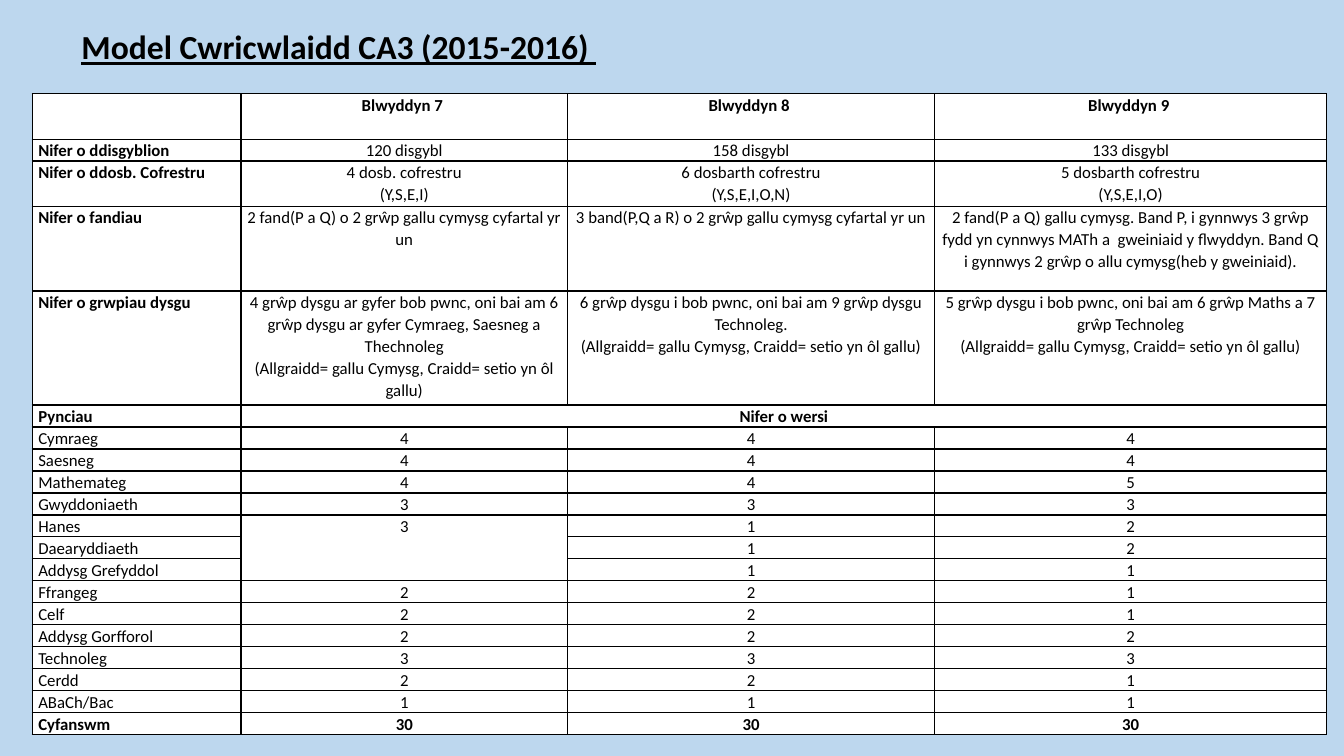
"""Build the Key Stage 3 curriculum model slide."""
import lxml.etree
import pptx
import pptx.dml.color
import pptx.enum.text
import pptx.oxml.ns
import pptx.util

Inches = pptx.util.Inches
ALIGN = pptx.enum.text.PP_ALIGN
qn = pptx.oxml.ns.qn

SETTING = "(Allgraidd= gallu Cymysg, Craidd= setio yn ôl gallu)"
SUMMARY_ROWS = [
    ["", "Blwyddyn 7 ", "Blwyddyn 8 ", "Blwyddyn 9 "],
    ["Nifer o ddisgyblion", "120 disgybl", "158 disgybl", "133 disgybl"],
    ["Nifer o ddosb. Cofrestru", "4 dosb. cofrestru\n(Y,S,E,I)",
     "6 dosbarth cofrestru\n(Y,S,E,I,O,N)", "5 dosbarth cofrestru\n(Y,S,E,I,O)"],
    ["Nifer o fandiau",
     "2 fand(P a Q) o 2 grŵp gallu cymysg cyfartal yr un",
     "3 band(P,Q a R) o 2 grŵp gallu cymysg cyfartal yr un",
     "2 fand(P a Q) gallu cymysg. Band P, i gynnwys 3 grŵp fydd yn cynnwys MATh a  gweiniaid "
     "y flwyddyn. Band Q i gynnwys 2 grŵp o allu cymysg(heb y gweiniaid)."],
    ["Nifer o grwpiau dysgu",
     "4 grŵp dysgu ar gyfer bob pwnc, oni bai am 6 grŵp dysgu ar gyfer Cymraeg, Saesneg "
     f"a Thechnoleg\n{SETTING}",
     f"6 grŵp dysgu i bob pwnc, oni bai am 9 grŵp dysgu Technoleg.\n{SETTING}",
     f"5 grŵp dysgu i bob pwnc, oni bai am 6 grŵp Maths a 7 grŵp Technoleg\n{SETTING}"],
    ["Pynciau", "Nifer o wersi", "", ""],
]
LESSONS = [
    ("Cymraeg", 4, 4, 4),
    ("Saesneg", 4, 4, 4),
    ("Mathemateg", 4, 4, 5),
    ("Gwyddoniaeth", 3, 3, 3),
    ("Hanes", 3, 1, 2),
    ("Daearyddiaeth", "", 1, 2),
    ("Addysg Grefyddol", "", 1, 1),
    ("Ffrangeg", 2, 2, 1),
    ("Celf", 2, 2, 1),
    ("Addysg Gorfforol", 2, 2, 2),
    ("Technoleg", 3, 3, 3),
    ("Cerdd", 2, 2, 1),
    ("ABaCh/Bac", 1, 1, 1),
    ("Cyfanswm", 30, 30, 30),
]
ROWS = SUMMARY_ROWS + [[str(value) for value in lesson] for lesson in LESSONS]
HEADING_ROW = len(SUMMARY_ROWS) - 1
HISTORY_ROW = [row[0] for row in ROWS].index("Hanes")
BOLD_ROWS = {0, HEADING_ROW, len(ROWS) - 1}
COLUMN_WIDTHS = [2.07, 3.24, 3.64, 3.89]
TABLE_HEIGHT = 6.36
TALL_ROWS = {0: 0.45, 2: 0.45, 3: 0.84, 4: 1.13}
LINE_ROW = (TABLE_HEIGHT - sum(TALL_ROWS.values())) / (len(ROWS) - len(TALL_ROWS))


def colour(value):
    return pptx.dml.color.RGBColor.from_string(value)


def write(frame, text, size=12, bold=False, underline=None, align=ALIGN.LEFT, spacing=None):
    for index, line in enumerate(text.split("\n")):
        para = frame.add_paragraph() if index else frame.paragraphs[0]
        para.alignment = align
        para.line_spacing = spacing
        if not line:
            end = lxml.etree.SubElement(para._p, qn("a:endParaRPr"))
            end.set("sz", str(size * 100))
            continue
        span = para.add_run()
        span.text = line
        span.font.name = "Calibri"
        span.font.size = pptx.util.Pt(size)
        span.font.bold = bold
        span.font.underline = underline
        span.font.color.rgb = colour("000000")


class CurriculumPage:
    ink = "000000"
    paper = "FFFFFF"
    border = 1

    def __init__(self, page, background):
        self.page = page
        page.background.fill.solid()
        page.background.fill.fore_color.rgb = colour(background)

    def title(self, text, left, top, width, height):
        box = self.page.shapes.add_textbox(*map(Inches, (left, top, width, height)))
        frame = box.text_frame
        frame.word_wrap = False
        frame.vertical_anchor = pptx.enum.text.MSO_ANCHOR.MIDDLE
        write(frame, text, size=24, bold=True, underline=True)

    def outline(self, cell):
        properties = cell._tc.get_or_add_tcPr()
        for index, side in enumerate(("lnL", "lnR", "lnT", "lnB")):
            line = lxml.etree.Element(qn(f"a:{side}"), w=str(pptx.util.Pt(self.border)))
            fill = lxml.etree.SubElement(line, qn("a:solidFill"))
            lxml.etree.SubElement(fill, qn("a:srgbClr"), val=self.ink)
            properties.insert(index, line)

    def cell(self, cell, text, bold, align):
        cell.margin_left = cell.margin_right = Inches(0.06)
        cell.margin_top = cell.margin_bottom = 0
        cell.fill.solid()
        cell.fill.fore_color.rgb = colour(self.paper)
        self.outline(cell)
        write(cell.text_frame, text, bold=bold, align=align, spacing=1.07)

    def table(self, left, top):
        shape = self.page.shapes.add_table(
            len(ROWS), len(COLUMN_WIDTHS), Inches(left), Inches(top),
            Inches(sum(COLUMN_WIDTHS)), Inches(TABLE_HEIGHT))
        table = shape.table
        table.first_row = table.horz_banding = False
        for column, width in zip(table.columns, COLUMN_WIDTHS):
            column.width = Inches(width)
        for r, texts in enumerate(ROWS):
            table.rows[r].height = Inches(TALL_ROWS.get(r, LINE_ROW))
            for c, text in enumerate(texts):
                bold = r in BOLD_ROWS or (c == 0 and r < HEADING_ROW)
                self.cell(table.cell(r, c), text, bold, ALIGN.CENTER if c else ALIGN.LEFT)
        table.cell(HEADING_ROW, 1).merge(table.cell(HEADING_ROW, 3))
        table.cell(HISTORY_ROW, 1).merge(table.cell(HISTORY_ROW + 2, 1))


def main():
    deck = pptx.Presentation()
    deck.slide_width, deck.slide_height = Inches(13.33), Inches(7.5)
    page = CurriculumPage(deck.slides.add_slide(deck.slide_layouts[6]), "BDD7EE")
    page.table(0.32, 0.93)
    page.title("Model Cwricwlaidd CA3 (2015-2016) ", 0.71, 0.21, 5.35, 0.5)
    deck.save("out.pptx")


if __name__ == "__main__":
    main()
